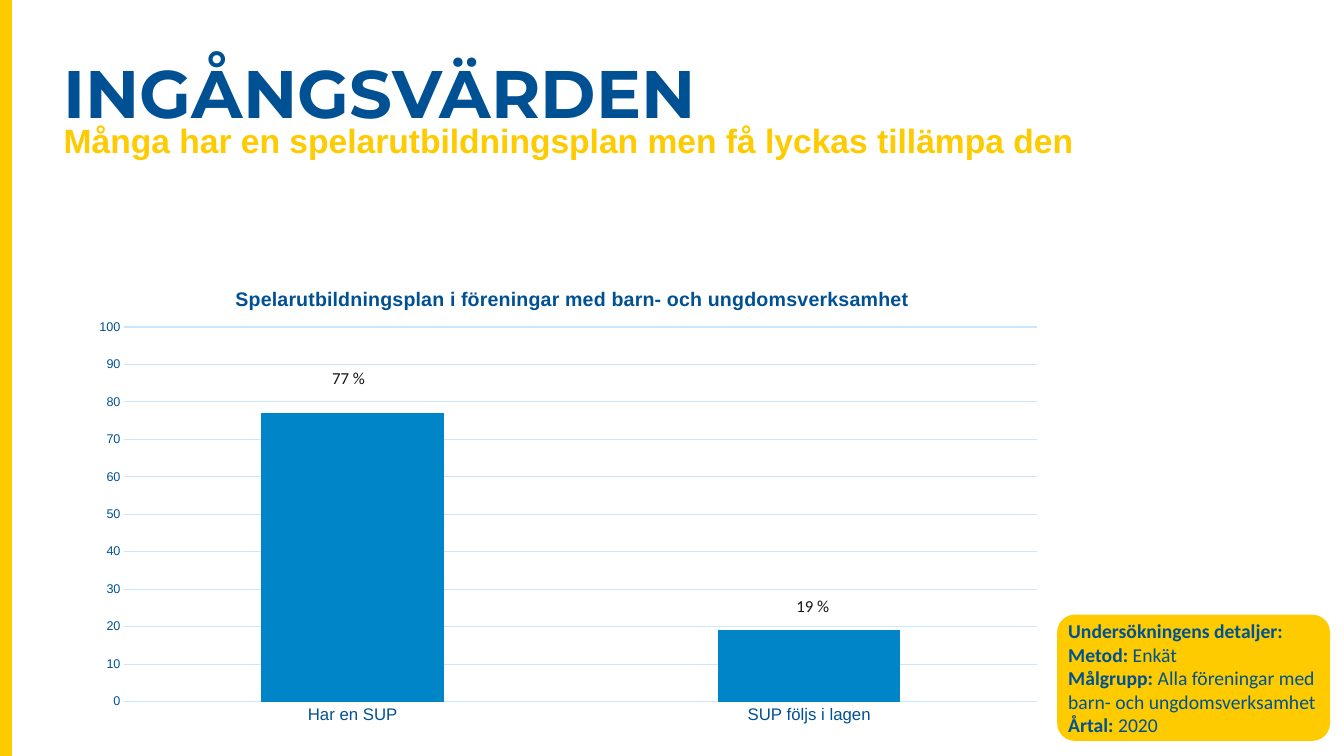
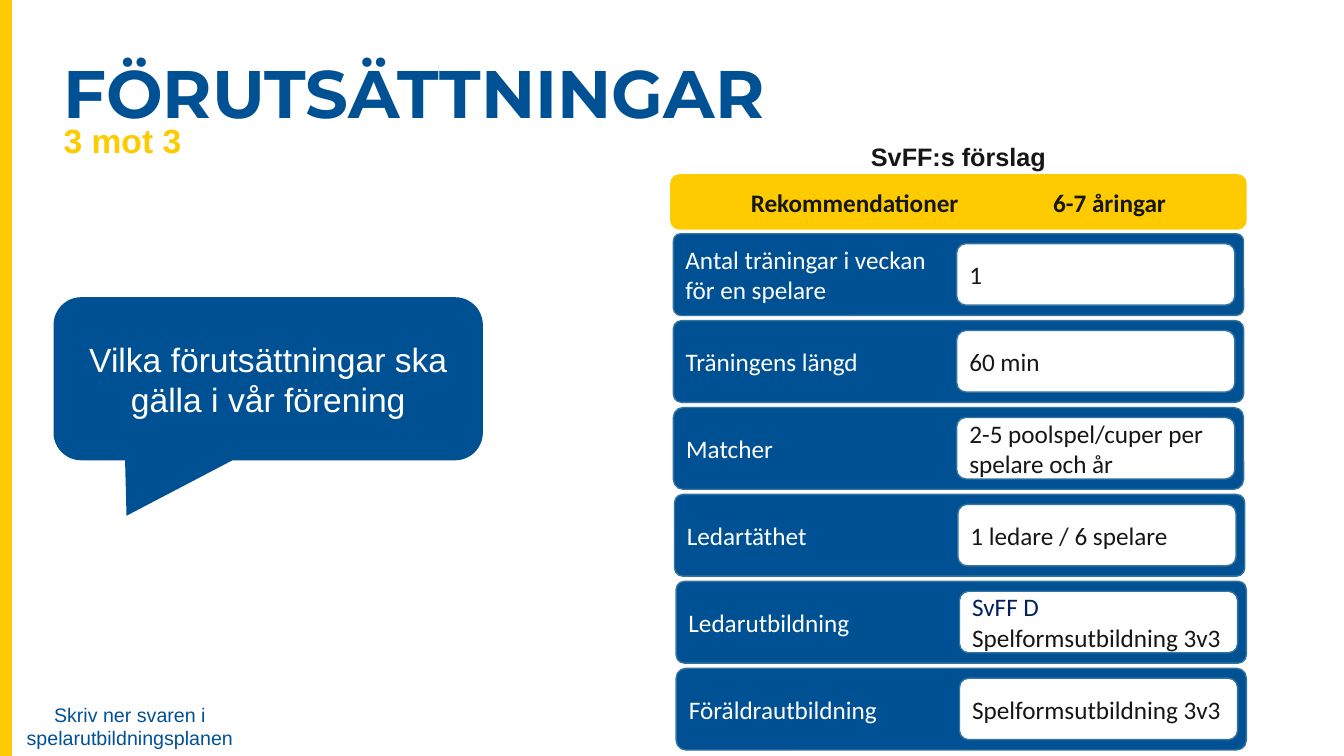
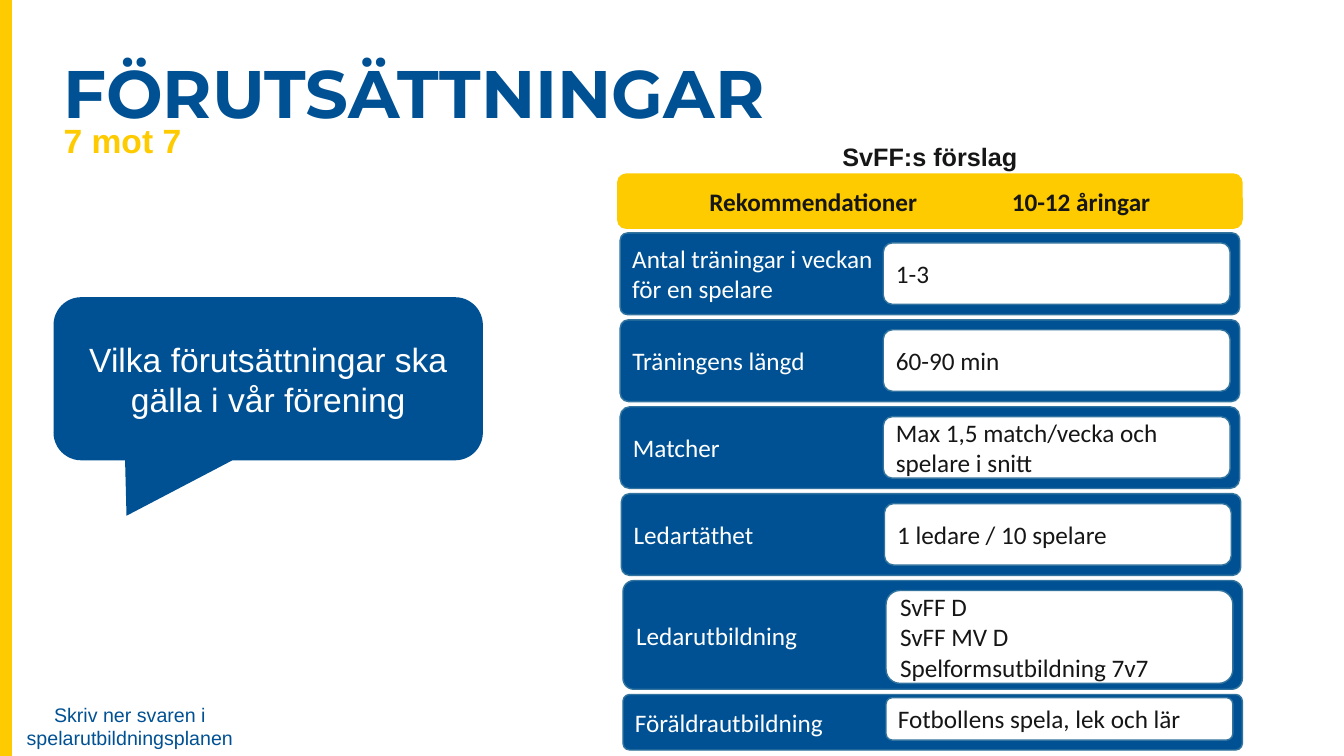
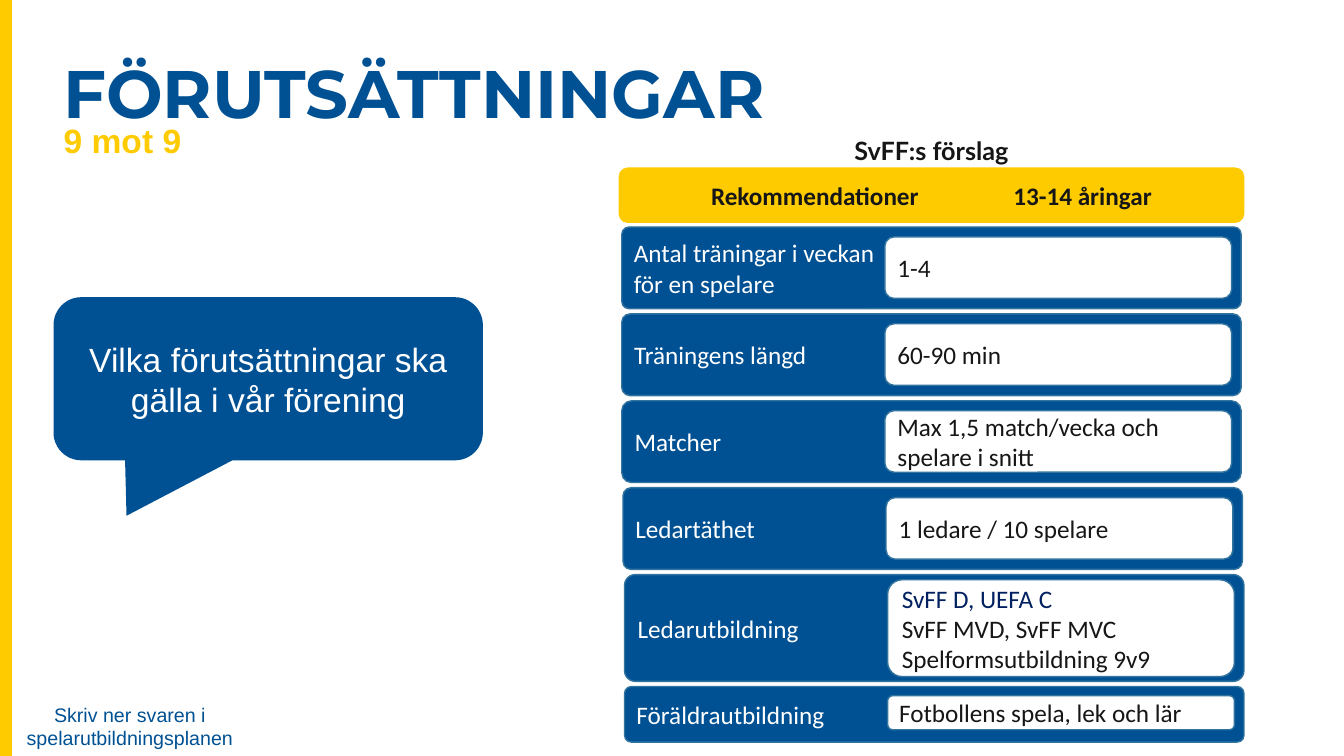
from lxml import etree
from pptx import Presentation
from pptx.chart import data
from pptx.dml.color import RGBColor
from pptx.enum import chart as ch, shapes, text as tx
from pptx.util import Cm, Pt

INK = {"blue": "005193", "gold": "FECB00", "bar": "0085C8", "grid": "C9E7FF",
       "edge": "32749F", "dark": "161616", "navy": "002060", "white": "FFFFFF"}
LEFT, MID = tx.PP_ALIGN.LEFT, tx.PP_ALIGN.CENTER
ROUND = shapes.MSO_SHAPE.ROUNDED_RECTANGLE

# Content: start slide
START = ("INGÅNGSVÄRDEN", "Många har en spelarutbildningsplan men få lyckas tillämpa den")
PLAN = "Spelarutbildningsplan i föreningar med barn- och ungdomsverksamhet"
BARS = {"Har en SUP": 77, "SUP följs i lagen": 19}
TAGS = [("77 %", (6.78, 9.3, 4.01, 0.81)), ("19 %", (18.26, 15.04, 4.45, 0.74))]
FACTS = [[("Undersökningens detaljer:", {"bold": True})]] + [
    [(key, {"bold": True}), (val, {})] for key, val in [
        ("Metod: ", "Enkät"),
        ("Målgrupp: ", "Alla föreningar med barn- och ungdomsverksamhet"),
        ("Årtal: ", "2020")]]

# Content: one slide per form of play
HEAD = "FÖRUTSÄTTNINGAR"
ASK = "Vilka förutsättningar ska gälla i vår förening"
NOTE = "Skriv ner svaren i spelarutbildningsplanen"
TOPICS = ["Antal träningar i veckan\nför en spelare", "Träningens längd", "Matcher",
          "Ledartäthet", "Ledarutbildning", "Föräldrautbildning"]
ROUNDS = (0.09, 0.1, 0.12, 0.1, 0.1, 0.12)
DRIFT = (0, 0, 0, 0.03, 0.07, 0.07)
ROW = (2.06, 0.25, 1.55)  # row height, inset of the answer, answer height
GAP = 0.13
NAVY = {"color": "navy"}
FORMS = [
    {"name": "3 mot 3", "age": "6-7 åringar", "left": 16.89, "top": 4.39, "wide": 14.53,
     "shift": 7.14, "box": 7.01, "font": "Arial", "rows": {},
     "answers": ["1", "60 min", "2-5 poolspel/cuper per spelare och år",
                 "1 ledare / 6 spelare",
                 [[("SvFF D\n", NAVY), ("Spelformsutbildning 3v3", {})]],
                 "Spelformsutbildning 3v3"]},
    {"name": "7 mot 7", "age": "10-12 åringar", "left": 15.55, "top": 4.37, "wide": 15.77,
     "shift": 6.63, "box": 8.74, "font": "Arial",
     "rows": {4: (2.74, 0.25, 2.34), 5: (1.4, 0.08, 1.07)},
     "answers": ["1-3", "60-90 min", "Max 1,5 match/vecka och spelare i snitt",
                 "1 ledare / 10 spelare",
                 ["SvFF D", "SvFF MV D\nSpelformsutbildning 7v7"],
                 "Fotbollens spela, lek och lär"]},
    {"name": "9 mot 9", "age": "13-14 åringar", "left": 15.59, "top": 4.22, "wide": 15.77,
     "shift": 6.63, "box": 8.74, "font": "Lato",
     "rows": {4: (2.69, 0.13, 2.44), 5: (1.4, 0.23, 0.86)},
     "answers": ["1-4", "60-90 min", "Max 1,5 match/vecka och spelare i snitt",
                 "1 ledare / 10 spelare",
                 [[("SvFF D, UEFA C\n", NAVY),
                   ("SvFF MVD, SvFF MVC\nSpelformsutbildning 9v9", {})]],
                 "Fotbollens spela, lek och lär"]},
]


def rgb(name):
    return RGBColor.from_string(INK[name])


def style(font, size, color, face, bold=False):
    font.size, font.name, font.bold = Pt(size), face, bold
    font.color.rgb = rgb(color)


def write(shape, body, size=18, color="dark", face="Calibri", bold=False, align=LEFT,
          space=None, inset=None, anchor=None):
    """Fill a shape with a string, or a list of paragraphs made of strings or runs."""
    frame = shape.text_frame
    frame.word_wrap, frame.auto_size = True, tx.MSO_AUTO_SIZE.NONE
    if anchor is not None:
        frame.vertical_anchor = anchor
    if inset is not None:
        frame.margin_left = frame.margin_right = Cm(inset)
        frame.margin_top = frame.margin_bottom = Cm(inset)
    for i, item in enumerate([body] if isinstance(body, str) else body):
        para = frame.add_paragraph() if i else frame.paragraphs[0]
        para.alignment, para.line_spacing = align, space
        para.space_before = Pt(0)
        for words, extra in [(item, {})] if isinstance(item, str) else item:
            look = {"size": size, "color": color, "face": face, "bold": bold, **extra}
            for j, line in enumerate(words.split("\n")):
                if j:
                    para.add_line_break()
                if line:
                    run = para.add_run()
                    run.text = line
                    style(run.font, **look)


def block(slide, at, fill, edge=None, kind=ROUND, adj=()):
    shape = slide.shapes.add_shape(kind, *map(Cm, at))
    shape.shadow.inherit = False
    shape.fill.solid()
    shape.fill.fore_color.rgb = rgb(fill)
    if edge:
        shape.line.color.rgb, shape.line.width = rgb(edge), Pt(1)
    else:
        shape.line.fill.background()
    for i, val in enumerate(adj):
        shape.adjustments[i] = val
    return shape


def label(slide, at, body, **look):
    write(slide.shapes.add_textbox(*map(Cm, at)), body, **look)


def new(deck, title, sub):
    slide = deck.slides.add_slide(deck.slide_layouts[0])
    write(slide.shapes.title, title, size=48, color="blue", face="Montserrat", bold=True,
          space=Pt(50), anchor=tx.MSO_ANCHOR.MIDDLE)
    write(slide.placeholders[1], sub, size=24, color="gold", face="Arial", bold=True,
          space=0.8, anchor=tx.MSO_ANCHOR.TOP)
    return slide


def pin(part, **spots):
    """Give a chart title or plot area a fixed place, in shares of the chart."""
    ns = part.nsmap["c"]
    for old in part.findall(f"{{{ns}}}layout"):
        part.remove(old)
    lay = etree.Element(f"{{{ns}}}layout")
    man = etree.SubElement(lay, f"{{{ns}}}manualLayout")
    if "w" in spots:
        etree.SubElement(man, f"{{{ns}}}layoutTarget", val="inner")
    for key in "xy":
        etree.SubElement(man, f"{{{ns}}}{key}Mode", val="edge")
    for key, val in spots.items():
        etree.SubElement(man, f"{{{ns}}}{key}", val=str(val))
    text = part.find(f"{{{ns}}}tx")
    part.insert(0 if text is None else 1, lay)


def graph(slide, at):
    source = data.CategoryChartData()
    source.categories = list(BARS)
    source.add_series("Series 1", list(BARS.values()))
    chart = slide.shapes.add_chart(ch.XL_CHART_TYPE.COLUMN_STACKED, *map(Cm, at), source).chart
    chart.has_legend = False
    style(chart.font, 10, "blue", "Arial")
    # Title
    chart.has_title = True
    para = chart.chart_title.text_frame.paragraphs[0]
    run = para.add_run()
    run.text = PLAN
    style(run.font, 14, "blue", "Arial", True)
    chart.chart_title.include_in_layout = False
    # Bars
    plot = chart.plots[0]
    plot.gap_width, plot.overlap, plot.vary_by_categories = 150, 100, False
    fill = plot.series[0].format.fill
    fill.solid()
    fill.fore_color.rgb = rgb("bar")
    # Axes
    cat, val = chart.category_axis, chart.value_axis
    for axis, size in ((cat, 12), (val, 9)):
        axis.major_tick_mark = axis.minor_tick_mark = ch.XL_TICK_MARK.NONE
        style(axis.tick_labels.font, size, "blue", "Arial")
    val.minimum_scale, val.maximum_scale, val.major_unit = 0, 100, 10
    val.has_major_gridlines = True
    val.format.line.fill.background()
    for line in (cat.format.line, val.major_gridlines.format.line):
        line.color.rgb, line.width = rgb("grid"), Pt(0.75)
    # Places
    title = chart.chart_title.element if hasattr(chart.chart_title, "element") else None
    if title is not None:
        pin(title, x=0.155, y=0.045)
    pin(chart.element.chart.plotArea, x=0.045, y=0.138, w=0.935, h=0.794)


def start(deck):
    slide = new(deck, *START)
    graph(slide, (2.03, 6.6, 24.61, 11.89))
    for words, at in TAGS:
        label(slide, at, words, size=12, align=MID, space=0.95, inset=0)
    write(block(slide, (26.64, 15.49, 6.88, 3.18), "gold", adj=[0.14]), FACTS,
          size=14, color="blue", inset=0.15)


def form(deck, info):
    slide = new(deck, HEAD, info["name"])
    call = block(slide, (1.35, 7.49, 10.82, 4.11), "blue", adj=(-0.33, 0.84, 0.17),
                 kind=shapes.MSO_SHAPE.ROUNDED_RECTANGULAR_CALLOUT)
    write(call, ASK, size=24, color="white", face="Arial", align=MID)
    label(slide, (0.25, 17.58, 6.05, 1.45), NOTE, size=14, color="blue", face="Arial", align=MID)
    # Heading of the list
    left, top, wide = info["left"], info["top"], info["wide"]
    label(slide, (left, top - 0.86, wide, 1.19), "SvFF:s förslag", face=info["font"],
          bold=True, align=MID, space=0.9)
    write(block(slide, (left, top, wide, 1.4), "gold"),
          "Rekommendationer \t\t" + info["age"], bold=True, align=MID)
    # Rows, stacked with one gap
    y = top + 1.5
    for i, (topic, answer) in enumerate(zip(TOPICS, info["answers"])):
        high, pad, tall = info["rows"].get(i, ROW)
        x = left + 0.08 + DRIFT[i]
        bar = block(slide, (x, y, wide - 0.16, high), "blue", "edge", adj=[ROUNDS[i]])
        write(bar, topic, color="white")
        box = block(slide, (x + info["shift"], y + pad, info["box"], tall), "white", "edge",
                    adj=[0.15])
        write(box, answer)
        y += high + GAP


def main():
    deck = Presentation()
    deck.slide_width, deck.slide_height = Cm(33.87), Cm(19.05)
    # Shared layout: title, subtitle and side band
    base = deck.slide_layouts[0]
    for i, at in enumerate([(1.35, 1.37, 26.47, 2.16), (1.35, 3.1, 26.47, 1.14)]):
        hold = base.placeholders[i]
        hold.left, hold.top, hold.width, hold.height = map(Cm, at)
    start(deck)
    band = block(deck.slides[0], (0, 0, 0.28, 19.05), "gold", "gold",
                 kind=shapes.MSO_SHAPE.RECTANGLE)
    base.shapes.element.insert(2, band.element)
    for info in FORMS:
        form(deck, info)
    deck.save("out.pptx")


if __name__ == "__main__":
    main()
